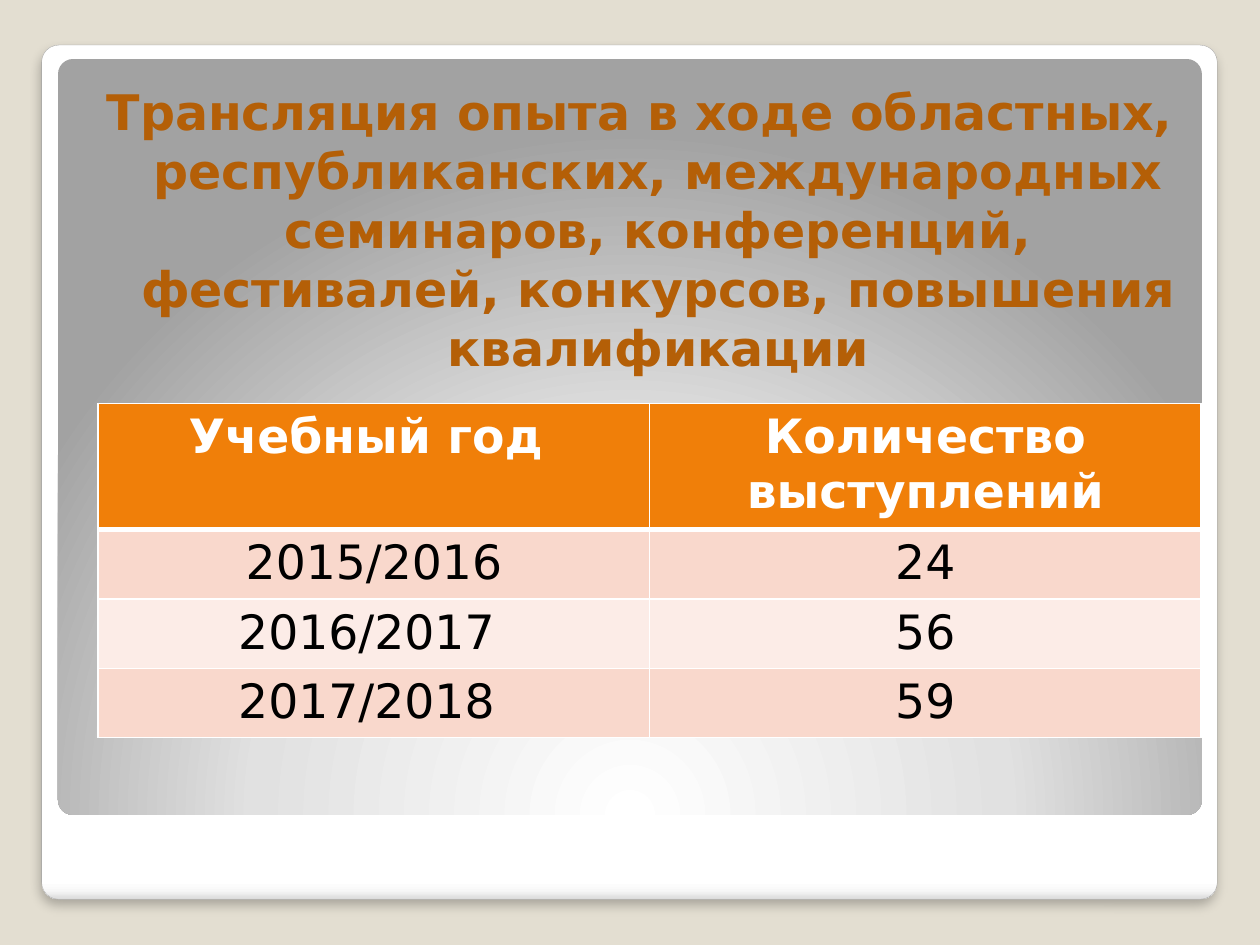
import pptx
import pptx.util
import pptx.dml.color
import pptx.enum.shapes
import pptx.enum.text
import pptx.oxml
import pptx.oxml.ns
from lxml import etree
from pptx.util import Cm, Pt

TITLE = ("Трансляция опыта в ходе областных, республиканских, международных "
         "семинаров, конференций, фестивалей, конкурсов, повышения квалификации")
ROWS = [
    ("Учебный год ", "Количество выступлений"),
    ("2015/2016", "24"),
    ("2016/2017 ", "56"),
    ("2017/2018 ", "59"),
]
THEME = {
    "font": "DejaVu Sans", "title_size": 28, "table_size": 27,
    "background": "E3DED1", "title": "B45F07", "frame_line": "A4A4A4",
    "header": "F07F09", "header_text": "FFFFFF", "body_text": "000000",
    "bands": ("F9D8CC", "FCECE7"), "border": "FFFFFF", "shadow": "000000",
    "frame": [(0, "FFFFFF"), (98, "FFFFFF"), (99, "F7F7F7"), (100, "DADADA")],
    "panel": [(0, "FFFFFF"), (55, "E1E1E1"), (100, "A2A2A2")],
}
LINEAR = ("lin", {"ang": "5400000", "scaled": "0"})
HEADER_HEIGHT, ROW_HEIGHT = Cm(2.46), Cm(1.37)


def rgb(value):
    return pptx.dml.color.RGBColor.from_string(value)


def add_child(parent, tag, **attributes):
    return etree.SubElement(parent, pptx.oxml.ns.qn("a:" + tag), attributes)


def write(frame, text, size, color, bold=False):
    paragraph = frame.paragraphs[0]
    paragraph.alignment = pptx.enum.text.PP_ALIGN.CENTER
    run = paragraph.add_run()
    run.text = text
    run.font.name = THEME["font"]
    run.font.size = Pt(size)
    run.font.bold = bold
    run.font.color.rgb = rgb(color)
    return paragraph


def add_card(slide, left, top, width, height, stops):
    """Add a rounded card and return it with its gradient element, still undirected."""
    card = slide.shapes.add_shape(
        pptx.enum.shapes.MSO_SHAPE.ROUNDED_RECTANGLE,
        Cm(left), Cm(top), Cm(width), Cm(height))
    card.adjustments[0] = 0.02
    card.shadow.inherit = False
    card.line.fill.background()
    card.fill.gradient()
    gradient = card.element.spPr.find(pptx.oxml.ns.qn("a:gradFill"))
    for child in list(gradient):
        gradient.remove(child)
    stop_list = add_child(gradient, "gsLst")
    for position, color in stops:
        stop = add_child(stop_list, "gs", pos=str(position * 1000))
        add_child(stop, "srgbClr", val=color)
    return card, gradient


def add_frame(slide):
    frame, gradient = add_card(slide, 0.84, 0.91, 23.7, 17.22, THEME["frame"])
    add_child(gradient, LINEAR[0], **LINEAR[1])
    frame.line.color.rgb = rgb(THEME["frame_line"])
    frame.line.width = Pt(0.16)
    effects = frame.element.spPr.find(pptx.oxml.ns.qn("a:effectLst"))
    shadow = add_child(effects, "outerShdw", blurRad=str(Pt(6)), dist=str(Pt(4)),
                       dir="5400000", algn="t", rotWithShape="0")
    add_child(add_child(shadow, "srgbClr", val=THEME["shadow"]), "alpha", val="25000")


def add_panel(slide):
    _, gradient = add_card(slide, 1.17, 1.19, 23.06, 15.24, THEME["panel"])
    circle = add_child(gradient, "path", path="circle")
    add_child(circle, "fillToRect", l="50000", t="175000", r="50000", b="-75000")


def add_title(slide):
    frame = slide.shapes.add_textbox(Cm(1.4), Cm(1.4), Cm(22.73), Cm(15.09)).text_frame
    frame.word_wrap = True
    frame.margin_left, frame.margin_right = Cm(0.51), Cm(0.25)
    frame.margin_top, frame.margin_bottom = Cm(0.25), Cm(0.13)
    paragraph = write(frame, TITLE, THEME["title_size"], THEME["title"], bold=True)
    paragraph.space_before = Pt(2.5)
    properties = paragraph._p.get_or_add_pPr()
    properties.set("marL", str(Cm(0.74)))
    properties.set("indent", str(-Cm(0.74)))


def add_borders(cell, top, bottom):
    properties = cell._tc.get_or_add_tcPr()
    for side, width in (("L", 1), ("R", 1), ("T", top), ("B", bottom)):
        border = add_child(properties, "ln" + side, w=str(Pt(width)))
        add_child(add_child(border, "solidFill"), "srgbClr", val=THEME["border"])


def add_talks_table(slide):
    columns = len(ROWS[0])
    heights = [HEADER_HEIGHT] + [ROW_HEIGHT] * (len(ROWS) - 1)
    table = slide.shapes.add_table(len(ROWS), columns, Cm(1.98), Cm(8.13),
                                   Cm(22.23), sum(heights)).table
    for index, (values, height) in enumerate(zip(ROWS, heights)):
        table.rows[index].height = height
        header = index == 0
        fill = THEME["header"] if header else THEME["bands"][(index - 1) % 2]
        color = THEME["header_text"] if header else THEME["body_text"]
        for column, value in enumerate(values):
            cell = table.cell(index, column)
            add_borders(cell, top=3 if index == 1 else 1, bottom=3 if header else 1)
            cell.fill.solid()
            cell.fill.fore_color.rgb = rgb(fill)
            write(cell.text_frame, value, THEME["table_size"], color, bold=header)


def main():
    presentation = pptx.Presentation()
    presentation.slide_width, presentation.slide_height = Cm(25.4), Cm(19.05)
    slide = presentation.slides.add_slide(presentation.slide_layouts[6])
    slide.background.fill.solid()
    slide.background.fill.fore_color.rgb = rgb(THEME["background"])
    add_frame(slide)
    add_panel(slide)
    add_title(slide)
    add_talks_table(slide)
    presentation.save("out.pptx")


if __name__ == "__main__":
    main()
